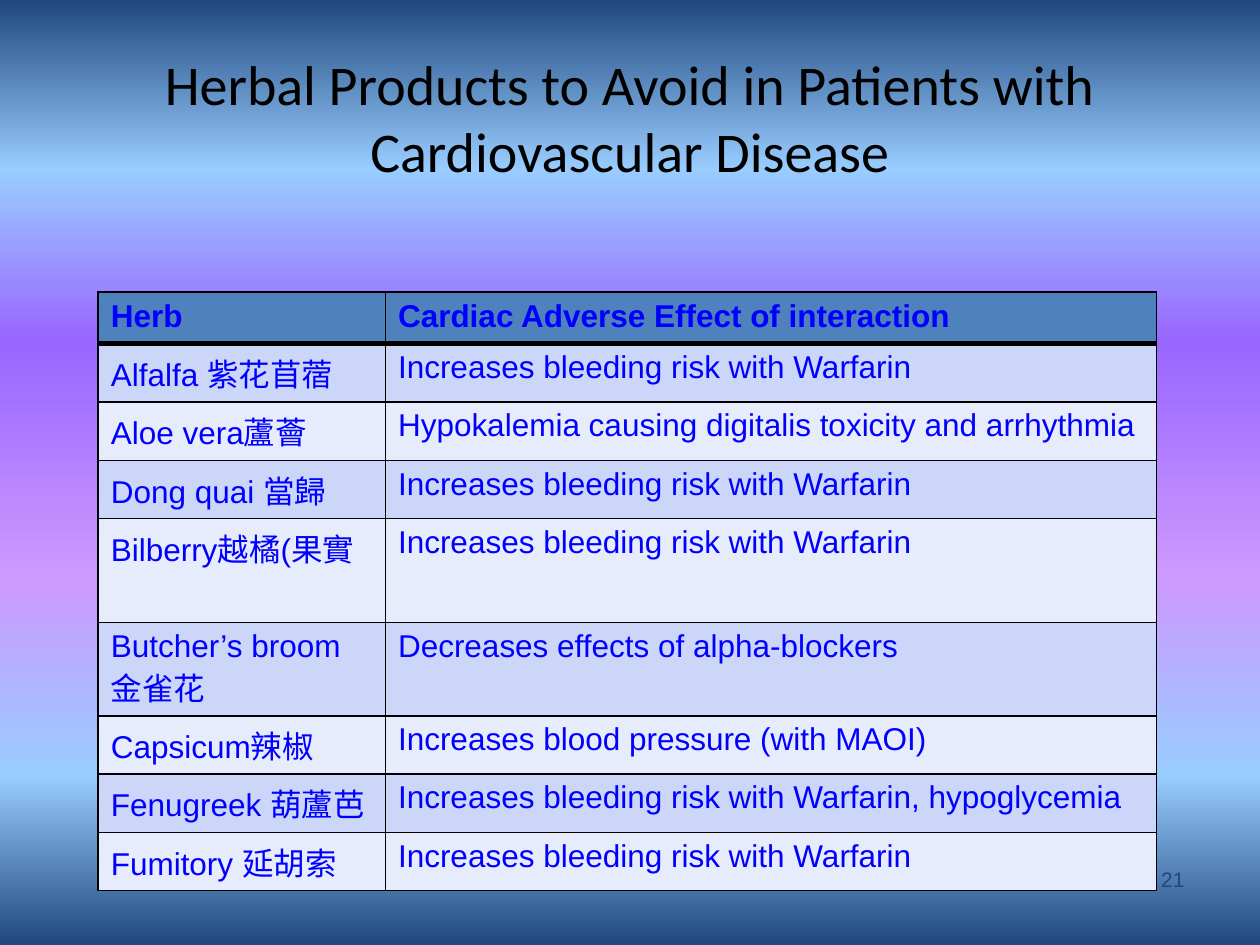
from lxml.etree import SubElement
from pptx import Presentation
from pptx.dml.color import RGBColor
from pptx.enum.text import MSO_ANCHOR, MSO_AUTO_SIZE, PP_ALIGN
from pptx.oxml.ns import qn
from pptx.util import Cm, Pt

COLORS = {
    "title": "000000",
    "border": "000000",
    "text": "0000FF",
    "header": "4F81BD",
    "odd": "CBD6F9",
    "even": "E7ECFC",
    "number": "1F497D",
}
BACKDROP = [
    (0, "1F497D"), (18, "99CCFF"), (36, "9966FF"),
    (61, "CC99FF"), (82, "99CCFF"), (100, "1F497D"),
]
BLEEDING = "Increases bleeding risk with Warfarin"
HERBS = [
    ("Herb", "Cardiac Adverse Effect of interaction"),
    ("Alfalfa 紫花苜蓿", BLEEDING),
    ("Aloe vera蘆薈", "Hypokalemia causing digitalis toxicity and arrhythmia"),
    ("Dong quai 當歸", BLEEDING),
    ("Bilberry越橘(果實", BLEEDING),
    ("Butcher’s broom\n金雀花", "Decreases effects of alpha-blockers"),
    ("Capsicum辣椒", "Increases blood pressure (with MAOI)"),
    ("Fenugreek 葫蘆芭", BLEEDING + ", hypoglycemia"),
    ("Fumitory 延胡索", BLEEDING),
]


def add_run(para, text, size, font, color, bold=False):
    span = para.add_run()
    span.text = text
    span.font.size = Pt(size)
    span.font.name = font
    span.font.bold = bold
    span.font.color.rgb = RGBColor.from_string(COLORS[color])


def paint_background(page):
    fill = page.background.fill
    fill.gradient()
    fill.gradient_angle = 270
    stops = page.element.find(".//" + qn("a:gsLst"))
    for stop in list(stops):
        stops.remove(stop)
    for percent, color in BACKDROP:
        stop = SubElement(stops, qn("a:gs"), pos=str(percent * 1000))
        SubElement(stop, qn("a:srgbClr"), val=color)


def place_title(page, left, top, width, height):
    title = page.shapes.title
    title.left, title.top, title.width, title.height = left, top, width, height
    frame = title.text_frame
    frame.auto_size = MSO_AUTO_SIZE.NONE
    frame.vertical_anchor = MSO_ANCHOR.MIDDLE
    para = frame.paragraphs[0]
    para.alignment = PP_ALIGN.CENTER
    add_run(para, "Herbal Products to Avoid in Patients with Cardiovascular Disease",
            32, "Calibri", "title")


def set_borders(cell, top, bottom):
    properties = cell._tc.get_or_add_tcPr()
    widths = {"a:lnL": 1, "a:lnR": 1, "a:lnT": top, "a:lnB": bottom}
    for tag, width in widths.items():
        line = SubElement(properties, qn(tag), w=str(Pt(width)))
        fill = SubElement(line, qn("a:solidFill"))
        SubElement(fill, qn("a:srgbClr"), val=COLORS["border"])


def place_table(page, left, top, width, row_height):
    box = page.shapes.add_table(len(HERBS), 2, left, top, width, row_height * len(HERBS))
    table = box.table
    table.columns[0].width = Cm(5.79)
    table.columns[1].width = width - Cm(5.79)
    for index, texts in enumerate(HERBS):
        has_two_lines = "\n" in texts[0]
        table.rows[index].height = Cm(1.78) if has_two_lines else row_height
        shade = "header" if index == 0 else ("odd" if index % 2 else "even")
        for column, text in enumerate(texts):
            cell = table.cell(index, column)
            set_borders(cell, 3 if index == 1 else 1, 3 if index == 0 else 1)
            cell.fill.solid()
            cell.fill.fore_color.rgb = RGBColor.from_string(COLORS[shade])
            for order, line in enumerate(text.split("\n")):
                frame = cell.text_frame
                para = frame.add_paragraph() if order else frame.paragraphs[0]
                add_run(para, line, 18, "Arial", "text", bold=index == 0)


def place_number(page, left, top, width, height):
    frame = page.shapes.add_textbox(left, top, width, height).text_frame
    frame.word_wrap = True
    para = frame.paragraphs[0]
    para.alignment = PP_ALIGN.RIGHT
    add_run(para, "21", 12, "Arial", "number")


def main():
    deck = Presentation()
    deck.slide_width, deck.slide_height = Cm(25.4), Cm(19.05)
    page = deck.slides.add_slide(deck.slide_layouts[5])
    paint_background(page)
    place_title(page, Cm(1.27), Cm(0.76), Cm(22.86), Cm(3.18))
    place_table(page, Cm(1.98), Cm(5.89), Cm(21.33), Cm(1.04))
    place_number(page, Cm(18.21), Cm(17.35), Cm(5.92), Cm(1.27))
    deck.save("out.pptx")


if __name__ == "__main__":
    main()
